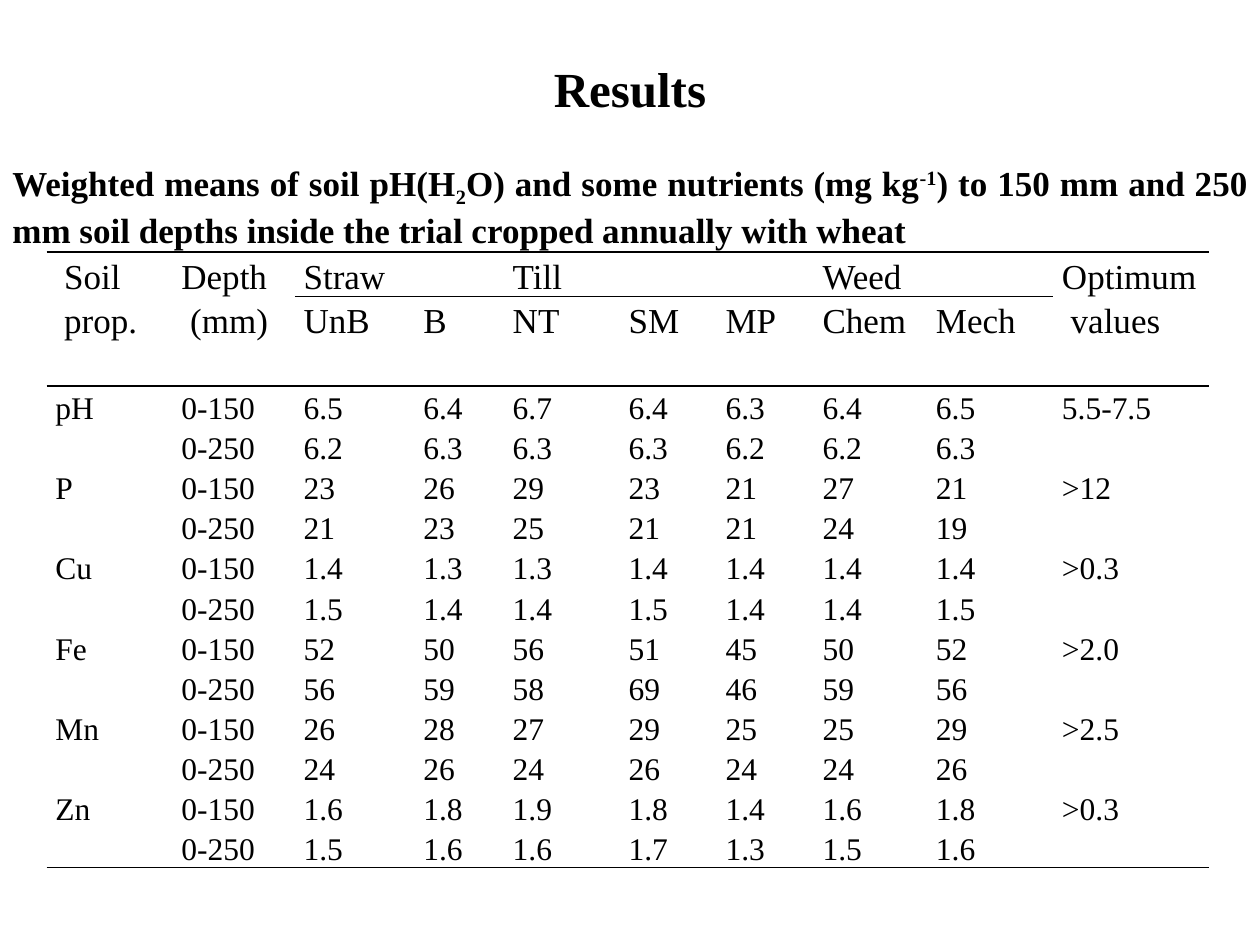
from lxml import etree
from pptx import Presentation, util as u
from pptx.dml.color import RGBColor
from pptx.enum import text
from pptx.oxml.ns import qn

BLACK = "000000"
FONT = "Times New Roman"
NO_STYLE = "{2D5ABB26-0587-4C30-8999-92F81FD0307C}"
COL_WIDTHS = [1, 0.97, 0.95, 0.71, 0.92, 0.77, 0.77, 0.9, 1, 1.24]
ROW_HEIGHTS = [0.35, 0.71] + [0.31] * 12
HEADER = [
    [" Soil\n prop.", "Depth\n (mm)", "Straw", "", "Till", "", "", "Weed", "",
     "Optimum\n values"],
    ["", "", "UnB", "B", "NT", "SM", "MP", "Chem", "Mech", ""],
]
# property, optimum, values at 0-150 mm, values at 0-250 mm
SOIL = [
    ("pH", "5.5-7.5", "6.5 6.4 6.7 6.4 6.3 6.4 6.5", "6.2 6.3 6.3 6.3 6.2 6.2 6.3"),
    ("P", ">12", "23 26 29 23 21 27 21", "21 23 25 21 21 24 19"),
    ("Cu", ">0.3", "1.4 1.3 1.3 1.4 1.4 1.4 1.4", "1.5 1.4 1.4 1.5 1.4 1.4 1.5"),
    ("Fe", ">2.0", "52 50 56 51 45 50 52", "56 59 58 69 46 59 56"),
    ("Mn", ">2.5", "26 28 27 29 25 25 29", "24 26 24 26 24 24 26"),
    ("Zn", ">0.3", "1.6 1.8 1.9 1.8 1.4 1.6 1.8", "1.5 1.6 1.6 1.7 1.3 1.5 1.6"),
]
CAPTION = [
    ("Weighted means of soil pH(H", 0), ("2", -25000),
    ("O) and some nutrients (mg kg", 0), ("-1", 30000),
    (") to 150 mm and 250 mm soil depths inside the trial cropped annually with wheat", 0),
]


def color(hex_string):
    return RGBColor.from_string(hex_string)


def set_attrs(obj, values):
    for name, value in values.items():
        setattr(obj, name, value)


def add_run(p, content, size, bold=False, baseline=0):
    r = p.add_run()
    r.text = content
    set_attrs(r.font, {"name": FONT, "size": u.Pt(size), "bold": bold})
    r.font.color.rgb = color(BLACK)
    if baseline:
        r.font._element.set("baseline", str(baseline))


def add_title(s):
    sp = s.shapes.title
    set_attrs(sp, {"left": u.Inches(0.5), "top": u.Inches(0.22),
                   "width": u.Inches(9), "height": u.Inches(0.95)})
    sp.text_frame.vertical_anchor = text.MSO_ANCHOR.MIDDLE
    p = sp.text_frame.paragraphs[0]
    p.alignment = text.PP_ALIGN.CENTER
    add_run(p, "Results", 28, bold=True)


def add_caption(s):
    sp = s.shapes.add_textbox(u.Inches(0), u.Inches(1.17), u.Inches(10), u.Inches(0.93))
    tf = sp.text_frame
    set_attrs(tf, {"word_wrap": True, "vertical_anchor": text.MSO_ANCHOR.MIDDLE})
    p = tf.paragraphs[0]
    p.alignment = text.PP_ALIGN.JUSTIFY
    for content, baseline in CAPTION:
        add_run(p, content, 20, bold=True, baseline=baseline)


def soil_rows():
    for name, optimum, shallow, deep in SOIL:
        yield [name, "0-150", *shallow.split(), optimum]
        yield ["", "0-250", *deep.split(), ""]


def set_borders(cell, sides):
    """Rule the given sides ("T", "B") and leave the others bare."""
    tc_pr = cell._tc.get_or_add_tcPr()
    for i, side in enumerate("LRTB"):
        ln = etree.Element(qn(f"a:ln{side}"), w=str(u.Pt(1)))
        if side in sides:
            fill = etree.SubElement(ln, qn("a:solidFill"))
            etree.SubElement(fill, qn("a:srgbClr"), val=BLACK)
        else:
            etree.SubElement(ln, qn("a:noFill"))
        tc_pr.insert(i, ln)


def fill_cell(cell, content, size, space_after):
    set_attrs(cell, {"margin_left": u.Inches(0.07), "margin_right": u.Inches(0.07),
                     "margin_top": 0, "margin_bottom": 0})
    cell.fill.background()
    tf = cell.text_frame
    for i, line in enumerate(content.split("\n")):
        p = tf.add_paragraph() if i else tf.paragraphs[0]
        set_attrs(p, {"line_spacing": 1.15, "space_after": u.Pt(space_after)})
        if line:
            add_run(p, line, size)
        else:
            etree.SubElement(p._p, qn("a:endParaRPr"), sz=str(size * 100))


def add_soil_table(s):
    rows = HEADER + list(soil_rows())
    frame = s.shapes.add_table(len(rows), len(COL_WIDTHS), u.Inches(0.37), u.Inches(2),
                               u.Inches(sum(COL_WIDTHS)), u.Inches(sum(ROW_HEIGHTS)))
    table = frame.table
    set_attrs(table, {"first_row": False, "horz_banding": False})
    table._tbl.tblPr.find(qn("a:tableStyleId")).text = NO_STYLE
    for column, width in zip(table.columns, COL_WIDTHS):
        column.width = u.Inches(width)
    for row, height in zip(table.rows, ROW_HEIGHTS):
        row.height = u.Inches(height)
    borders = {0: "TB", 1: "TB", 2: "T", len(rows) - 1: "B"}
    spanning = (0, 1, len(COL_WIDTHS) - 1)
    for i, row in enumerate(rows):
        for j, content in enumerate(row):
            cell = table.cell(i, j)
            size, space_after = (20, 0) if i < len(HEADER) else (18, 10)
            fill_cell(cell, content, size, space_after)
            sides = borders.get(i, "")
            if i == 1 and j in spanning:
                sides = "B"
            set_borders(cell, sides)
    for j in spanning:
        table.cell(0, j).merge(table.cell(1, j))


def main():
    prs = Presentation()
    set_attrs(prs, {"slide_width": u.Inches(10), "slide_height": u.Inches(7.5)})
    s = prs.slides.add_slide(prs.slide_layouts[5])
    add_title(s)
    add_soil_table(s)
    add_caption(s)
    prs.save("out.pptx")


if __name__ == "__main__":
    main()
